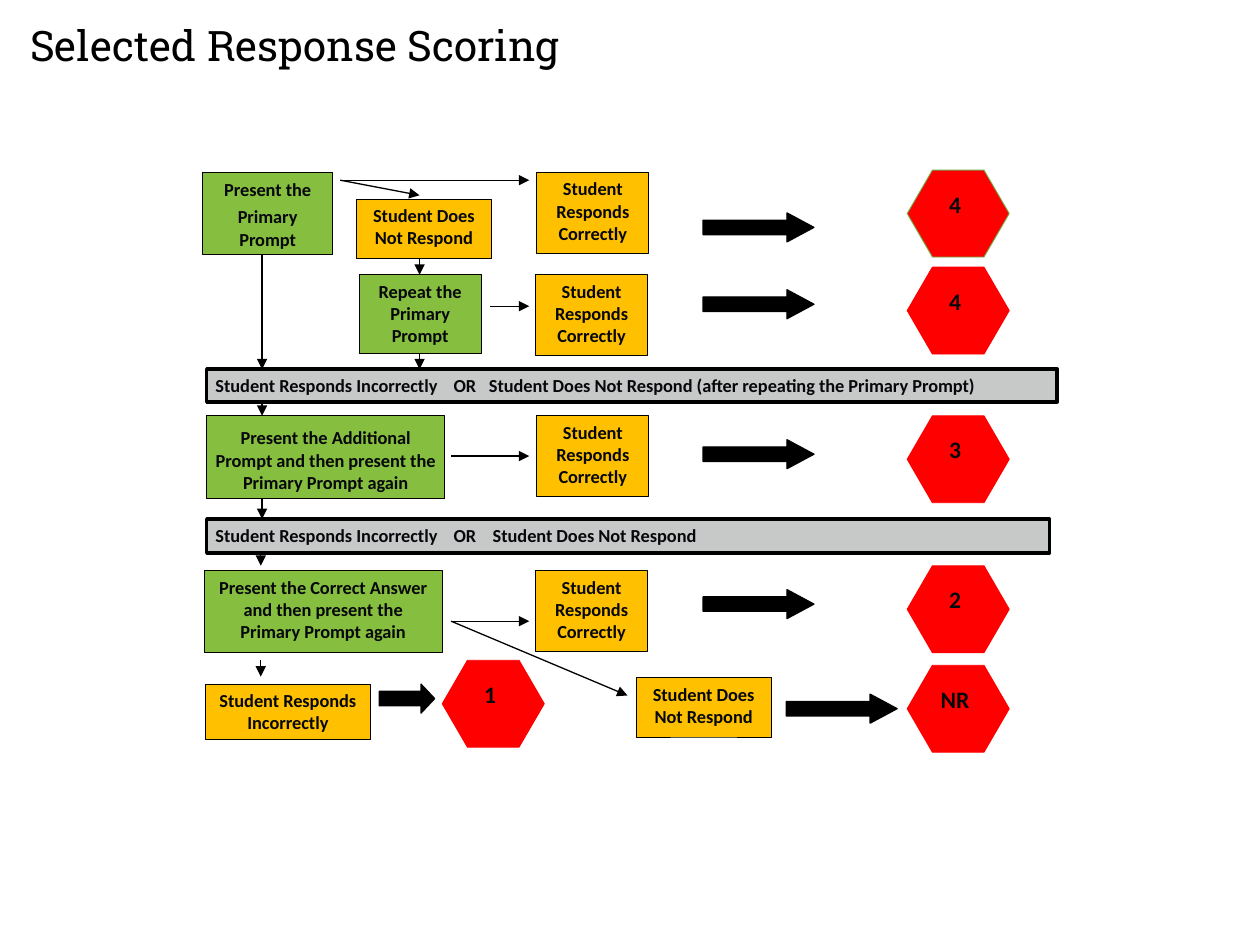
from lxml import etree
from pptx import Presentation
from pptx import util as u
from pptx.dml.color import RGBColor
from pptx.enum import shapes, text
from pptx.oxml import ns

GREEN = RGBColor(0x86, 0xBE, 0x40)
AMBER = RGBColor(0xFF, 0xC0, 0x00)
RED = RGBColor(0xFF, 0x00, 0x00)
GRAY = RGBColor(0xC7, 0xC9, 0xC9)
BLACK = RGBColor(0x00, 0x00, 0x00)
INK = RGBColor(0x07, 0x08, 0x0B)
LEAF = RGBColor(0x70, 0xAD, 0x47)
CORRECT = "Student Responds Correctly"
SILENT = "Student Does Not Respond"
WRONG = "Student Responds Incorrectly"
MSO = shapes.MSO_SHAPE
CENTER = text.PP_ALIGN.CENTER
LEFT = text.PP_ALIGN.LEFT


def add_text(p, content, font="Calibri", size=10.5, color=INK, bold=True):
    r = p.add_run()
    r.text = content
    r.font.name = font
    r.font.size = u.Pt(size)
    r.font.color.rgb = color
    r.font.bold = bold


def add_box(s, kind, x, y, w, h, fill, line=BLACK, weight=0.5):
    sp = s.shapes.add_shape(kind, *map(u.Inches, (x, y, w, h)))
    sp.shadow.inherit = False
    sp.fill.solid()
    sp.fill.fore_color.rgb = fill
    sp.line.color.rgb = line
    sp.line.width = u.Pt(weight)
    return sp


def start_paragraph(sp, align=CENTER):
    tf = sp.text_frame
    tf.word_wrap = True
    tf.vertical_anchor = text.MSO_ANCHOR.TOP
    tf.margin_left = tf.margin_right = u.Inches(0.07)
    tf.margin_top = tf.margin_bottom = u.Inches(0.04)
    p = tf.paragraphs[0]
    p.alignment = align
    return p


def add_step(s, x, y, w, h, fill, *parts):
    p = start_paragraph(add_box(s, MSO.RECTANGLE, x, y, w, h, fill))
    for i, part in enumerate(parts):
        if i:
            add_text(p, " ", size=13.5)
        add_text(p, part)


def add_arrow(s, x1, y1, x2, y2):
    c = s.shapes.add_connector(shapes.MSO_CONNECTOR.STRAIGHT,
                               *map(u.Inches, (x1, y1, x2, y2)))
    c.line.color.rgb = BLACK
    c.line.width = u.Pt(0.75)
    etree.SubElement(c.line._get_or_add_ln(), ns.qn("a:tailEnd"), type="triangle")
    etree.SubElement(c._element.spPr, ns.qn("a:effectLst"))


def add_block_arrow(s, x, y, w=0.88):
    sp = add_box(s, MSO.RIGHT_ARROW, x, y, w, 0.23, BLACK, weight=0.75)
    sp.adjustments[1] = 0.93 if w > 0.5 else 0.47


def add_score(s, x, y, score, line=RED):
    sp = add_box(s, MSO.HEXAGON, x, y, 0.81, 0.69, RED, line)
    sp.adjustments[0] = 0.29
    p = start_paragraph(sp)
    sp.text_frame.margin_right = u.Inches(0.12)
    add_text(p, score, size=13.5)


def correct_row(s, x, y, score, arrow_dy, score_dy, line=RED):
    add_step(s, x, y, 0.89, 0.64, AMBER, CORRECT)
    add_block_arrow(s, 5.58, y + arrow_dy)
    add_score(s, 7.2, y + score_dy, score, line)


def banner(s, x, y, w, h, tail, tabs):
    sp = add_box(s, MSO.RECTANGLE, x, y, w, h, GRAY, weight=2)
    p = start_paragraph(sp, LEFT)
    tab_list = etree.SubElement(p._p.get_or_add_pPr(), ns.qn("a:tabLst"))
    for pos in tabs:
        etree.SubElement(tab_list, ns.qn("a:tab"), pos=str(u.Inches(pos)), algn="l")
    add_text(p, f"{WRONG}\tOR\t{tail}")


def primary_stage(s, x, y):
    add_arrow(s, x + 0.47, y + 0.62, x + 0.47, y + 1.56)
    add_step(s, x, y, 1.03, 0.65, GREEN, "Present the Primary", "Prompt")
    add_arrow(s, x + 1.09, y + 0.06, x + 2.59, y + 0.06)
    add_arrow(s, x + 1.09, y + 0.06, x + 1.72, y + 0.18)
    add_step(s, x + 1.22, y + 0.21, 1.07, 0.47, AMBER, SILENT)
    add_arrow(s, x + 1.72, y + 0.68, x + 1.72, y + 0.81)
    correct_row(s, x + 2.65, y, "4", 0.32, -0.02, LEAF)


def repeat_stage(s, x, y):
    add_step(s, x, y, 0.97, 0.63, GREEN, "Repeat the Primary Prompt")
    add_arrow(s, x + 1.04, y + 0.25, x + 1.35, y + 0.25)
    add_arrow(s, x + 0.48, y + 0.62, x + 0.48, y + 0.75)
    correct_row(s, x + 1.4, y, "4", 0.12, -0.06)


def additional_stage(s, x, y):
    add_arrow(s, x + 0.44, y - 0.12, x + 0.44, y)
    add_arrow(s, x + 0.44, y + 0.63, x + 0.44, y + 0.82)
    add_step(s, x, y, 1.89, 0.66, GREEN, "Present the Additional",
             "Prompt and then present the Primary Prompt again")
    add_arrow(s, x + 1.94, y + 0.32, x + 2.56, y + 0.32)
    correct_row(s, x + 2.62, y, "3", 0.19, 0)


def answer_stage(s, x, y):
    add_arrow(s, x + 0.45, y - 0.16, x + 0.45, y - 0.04)
    add_step(s, x, y, 1.89, 0.65, GREEN,
             "Present the Correct Answer and then present the Primary Prompt again")
    add_arrow(s, x + 1.96, y + 0.4, x + 2.58, y + 0.4)
    add_arrow(s, x + 1.96, y + 0.4, x + 3.36, y + 0.99)
    add_arrow(s, x + 0.45, y + 0.71, x + 0.45, y + 0.84)
    correct_row(s, x + 2.63, y, "2", 0.15, -0.04)


def outcome_row(s, x, y):
    add_step(s, x, y, 1.31, 0.44, AMBER, WRONG)
    add_block_arrow(s, x + 1.38, y, 0.44)
    add_score(s, x + 1.88, y - 0.19, "1")
    add_step(s, x + 3.42, y - 0.05, 1.07, 0.47, AMBER, SILENT)
    add_block_arrow(s, x + 4.61, y + 0.08)
    add_score(s, x + 5.57, y - 0.15, "NR")


def slide_title(s, x, y, w, h):
    sp = s.shapes.title
    sp.left, sp.top, sp.width, sp.height = map(u.Inches, (x, y, w, h))
    tf = sp.text_frame
    tf.margin_left = tf.margin_right = tf.margin_top = tf.margin_bottom = 0
    tf.vertical_anchor = text.MSO_ANCHOR.MIDDLE
    p = tf.paragraphs[0]
    p.alignment = LEFT
    p.line_spacing = 0.9
    add_text(p, "Selected Response Scoring", font="Roboto Slab", size=24,
             color=BLACK, bold=False)


def main():
    prs = Presentation()
    prs.slide_width, prs.slide_height = u.Inches(10), u.Inches(7.5)
    s = prs.slides.add_slide(prs.slide_layouts[5])
    slide_title(s, 0.24, 0.18, 9.51, 0.4)
    primary_stage(s, 1.61, 1.37)
    repeat_stage(s, 2.85, 2.18)
    banner(s, 1.64, 2.93, 6.75, 0.26,
           f"{SILENT} (after repeating the Primary Prompt)", (1.89, 2.17))
    additional_stage(s, 1.64, 3.3)
    banner(s, 1.64, 4.12, 6.69, 0.27, SILENT, (1.89, 2.2))
    answer_stage(s, 1.62, 4.53)
    outcome_row(s, 1.63, 5.43)
    prs.save("out.pptx")


if __name__ == "__main__":
    main()
